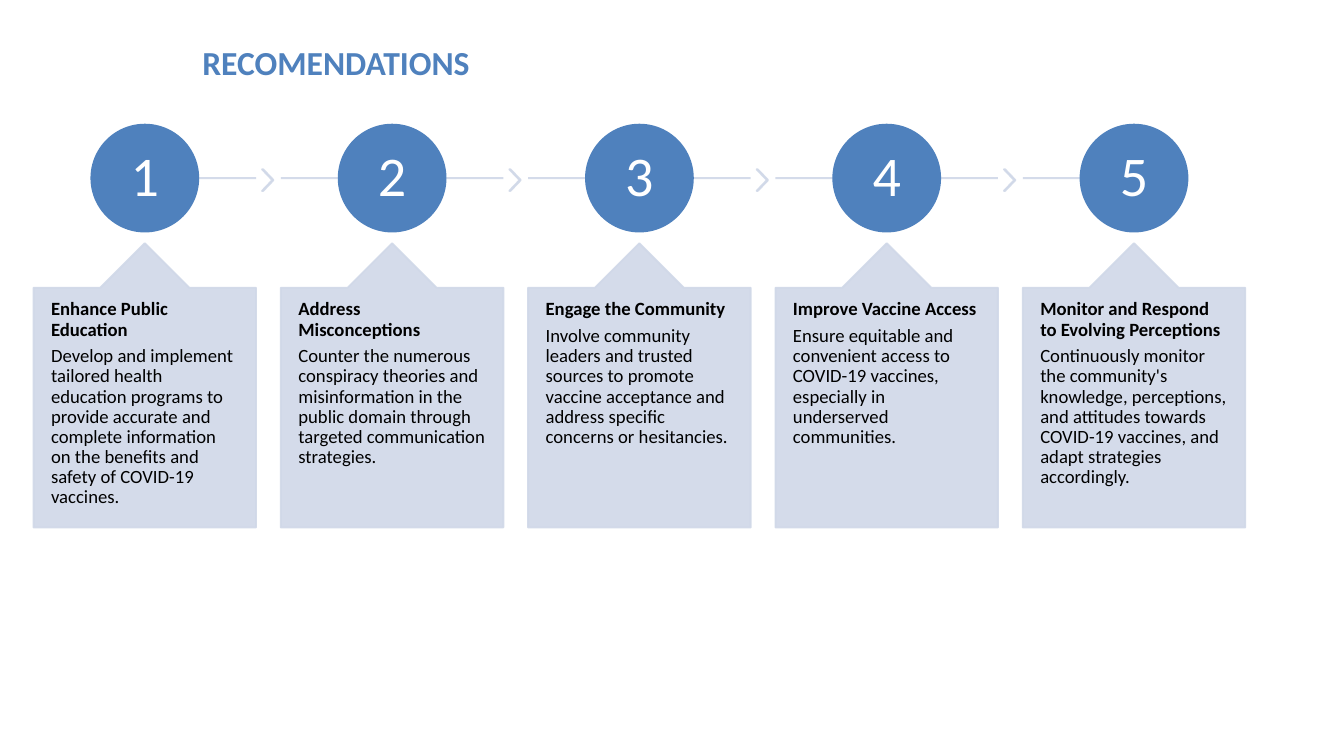
from lxml import etree
from pptx import Presentation, util as u
from pptx.dml.color import RGBColor
from pptx.enum import shapes, text
from pptx.oxml.ns import qn

BLUE = RGBColor(0x4F, 0x81, 0xBD)
PALE = RGBColor(0xD0, 0xD8, 0xE8)
WHITE = RGBColor(0xFF, 0xFF, 0xFF)
BLACK = RGBColor(0x00, 0x00, 0x00)

# Column grid, in inches
LEFT, PITCH, WIDTH = 0.5, 3.68, 3.31
CIRCLE = 1.59
AXIS = 2.65

STEPS = [
    ("Enhance Public Education",
     "Develop and implement tailored health education programs to provide accurate "
     "and complete information on the benefits and safety of COVID-19 vaccines."),
    ("Address Misconceptions",
     "Counter the numerous conspiracy theories and misinformation in the public "
     "domain through targeted communication strategies."),
    ("Engage the Community",
     "Involve community leaders and trusted sources to promote vaccine acceptance "
     "and address specific concerns or hesitancies."),
    ("Improve Vaccine Access",
     "Ensure equitable and convenient access to COVID-19 vaccines, especially in "
     "underserved communities."),
    ("Monitor and Respond to Evolving Perceptions",
     "Continuously monitor the community's knowledge, perceptions, and attitudes "
     "towards COVID-19 vaccines, and adapt strategies accordingly."),
]


class StepPage:
    """Style and current slide; horizontal places are counted in columns."""

    font = "Calibri"
    stroke = u.Pt(2)

    def __init__(self, deck):
        self.page = deck.slides.add_slide(deck.slide_layouts[5])

    @staticmethod
    def column(number):
        return LEFT + number * PITCH

    def paint(self, fill, color):
        fill.solid()
        fill.fore_color.rgb = color
        if color == PALE:
            tint = fill._xPr.find(qn("a:solidFill"))[0]
            etree.SubElement(tint, qn("a:alpha"), val="90000")

    def set_words(self, para, words, size, color, bold=False):
        para.text = words
        para.font.name = self.font
        para.font.size = u.Pt(size)
        para.font.bold = bold
        para.font.color.rgb = color

    def shape(self, kind, left, top, width, height, color):
        box = self.page.shapes.add_shape(kind, *map(u.Inches, (left, top, width, height)))
        box.shadow.inherit = False
        self.paint(box.fill, color)
        self.paint(box.line.fill, color)
        box.line.width = self.stroke
        return box

    def title(self, words):
        box = self.page.shapes.title
        box.left, box.top, box.width, box.height = map(u.Inches, (LEFT, 0.3, 9, 1.25))
        box.text_frame.vertical_anchor = text.MSO_ANCHOR.MIDDLE
        para = box.text_frame.paragraphs[0]
        self.set_words(para, words, 36, BLUE, True)
        para.alignment = text.PP_ALIGN.CENTER

    def rail(self, number, start, end):
        """Line along the axis between two shares of a column's width."""
        ends = [u.Inches(self.column(number) + share * WIDTH) for share in (start, end)]
        rail = self.page.shapes.add_connector(
            shapes.MSO_CONNECTOR.STRAIGHT, ends[0], u.Inches(AXIS), ends[1], u.Inches(AXIS))
        self.paint(rail.line.fill, PALE)
        rail.line.width = self.stroke
        etree.SubElement(rail._element.spPr, qn("a:effectLst"))

    def chevron(self, number):
        box = self.shape(shapes.MSO_SHAPE.CHEVRON, self.column(number) + WIDTH + 0.09,
                         2.52, 0.17, 0.32, PALE)
        box.adjustments[0] = 0.9

    def circle(self, number):
        box = self.shape(shapes.MSO_SHAPE.OVAL, self.column(number) + (WIDTH - CIRCLE) / 2,
                         AXIS - CIRCLE / 2, CIRCLE, CIRCLE, BLUE)
        frame = box.text_frame
        frame.margin_left = frame.margin_right = u.Inches(0.06)
        frame.margin_top = frame.margin_bottom = u.Inches(0.06)
        frame.vertical_anchor = text.MSO_ANCHOR.MIDDLE
        para = frame.paragraphs[0]
        self.set_words(para, str(number + 1), 60, WHITE)
        para.alignment = text.PP_ALIGN.CENTER
        para.line_spacing = 0.9

    def callout(self, number, heading, advice):
        box = self.shape(shapes.MSO_SHAPE.UP_ARROW_CALLOUT, self.column(number),
                         3.62, WIDTH, 4.23, PALE)
        for index, value in enumerate((0.5, 0.2, 0.2, 1)):
            box.adjustments[index] = value
        frame = box.text_frame
        frame.word_wrap = True
        frame.vertical_anchor = text.MSO_ANCHOR.TOP
        frame.margin_left = frame.margin_right = u.Inches(0.26)
        frame.margin_top = frame.margin_bottom = u.Inches(0.18)
        for para, words, bold in ((frame.paragraphs[0], heading, True),
                                  (frame.add_paragraph(), advice, False)):
            self.set_words(para, words, 20, BLACK, bold)
            para.alignment = text.PP_ALIGN.LEFT
            para.line_spacing = 0.9
            para.space_after = u.Pt(7)


def main():
    deck = Presentation()
    deck.slide_width, deck.slide_height = u.Inches(20), u.Inches(11.25)
    page = StepPage(deck)
    page.title("RECOMENDATIONS")

    # One column per step; the rail starts and stops at the outer circles
    last = len(STEPS) - 1
    for number, (heading, advice) in enumerate(STEPS):
        page.rail(number, 0.5 if number == 0 else 0, 0.5 if number == last else 1)
        if number < last:
            page.chevron(number)
        page.circle(number)
        page.callout(number, heading, advice)

    deck.save("out.pptx")


if __name__ == "__main__":
    main()
